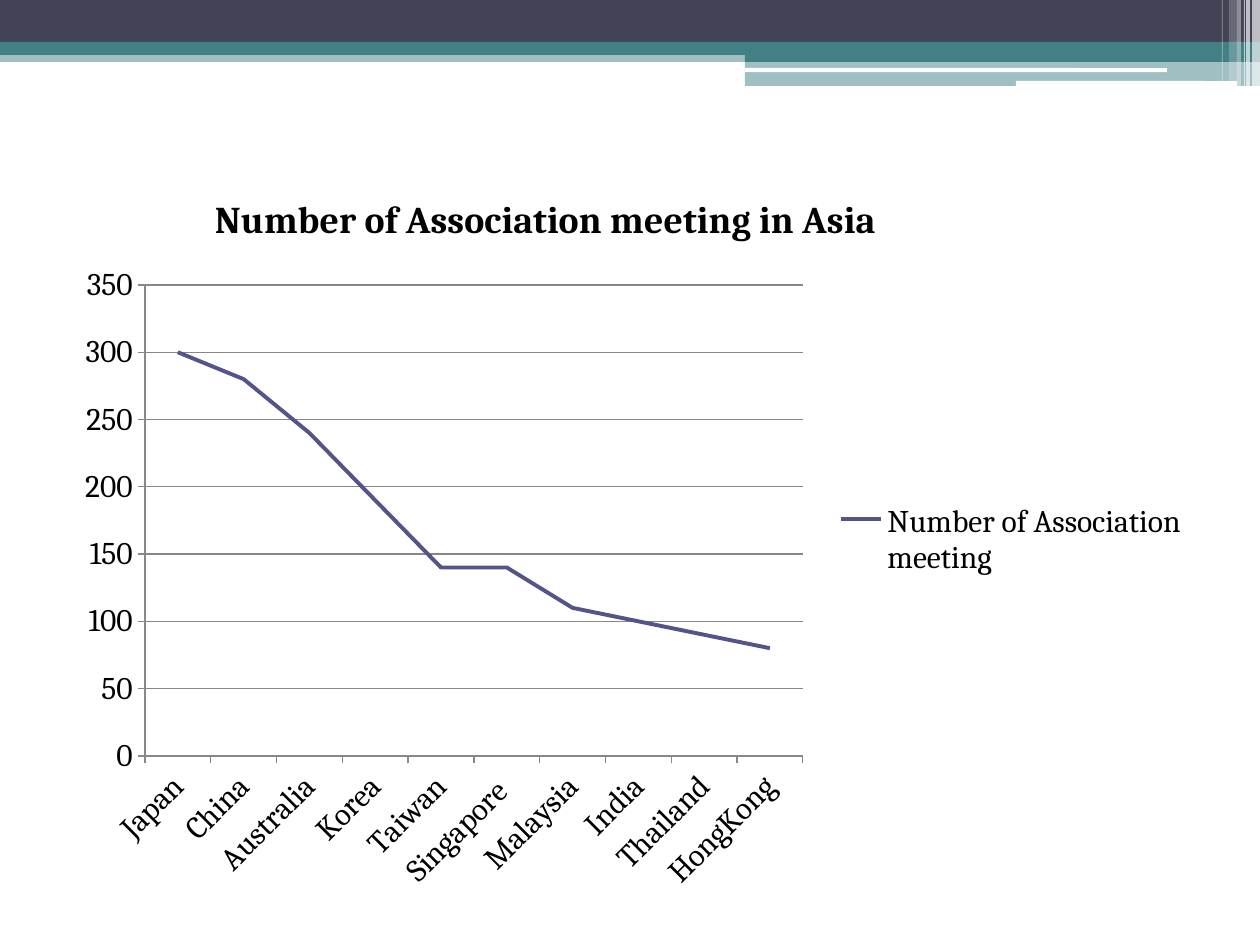
from typing import NamedTuple

from lxml import etree
from pptx import Presentation
from pptx.chart.data import CategoryChartData
from pptx.dml.color import RGBColor
from pptx.enum.chart import XL_CHART_TYPE, XL_LEGEND_POSITION, XL_TICK_MARK
from pptx.enum.shapes import MSO_SHAPE
from pptx.oxml.ns import qn
from pptx.util import Emu, Pt

RECT, ROUNDED = MSO_SHAPE.RECTANGLE, MSO_SHAPE.ROUNDED_RECTANGLE
LINE, LEGEND_RIGHT = XL_CHART_TYPE.LINE, XL_LEGEND_POSITION.RIGHT
TICK_OUTSIDE = XL_TICK_MARK.OUTSIDE

PX_PER_INCH = 126
NAVY, TEAL, WHITE, BLACK = "424456", "438086", "FFFFFF", "000000"
SERIES_COLOR, AXIS_COLOR = "53548A", "878787"
FONT = "Cambria"


class Box(NamedTuple):
    left: int
    top: int
    width: int
    height: int


class Band(NamedTuple):
    box: Box
    color: str
    opacity: int = 100
    kind: MSO_SHAPE = RECT


CHART = Box(63, 175, 1134, 731)
TITLE_AREA = Box(208, 188, 660, 44)
PLOT_AREA = Box(145, 285, 658, 471)
LEGEND_AREA = Box(832, 500, 358, 80)

HEADER = [
    Band(Box(0, 50, 1260, 12), TEAL, 50),
    Band(Box(0, 0, 1260, 42), NAVY),
    Band(Box(0, 42, 1260, 13), TEAL),
    Band(Box(745, 49, 515, 13), TEAL),
    Band(Box(745, 61, 515, 25), TEAL, 50),
    Band(Box(745, 68, 422, 4), WHITE, kind=ROUNDED),
    Band(Box(1016, 81, 221, 5), WHITE, kind=ROUNDED),
    Band(Box(1252, 0, 8, 86), WHITE, 65),
    Band(Box(1246, 0, 4, 86), WHITE, 65),
    Band(Box(1244, 0, 1, 86), WHITE, 60),
    Band(Box(1237, 0, 4, 86), WHITE, 40),
    Band(Box(1229, 0, 8, 81), WHITE, 20),
    Band(Box(1222, 0, 1, 81), WHITE, 30),
]

MEETINGS = {
    "Japan": 300, "China": 280, "Australia": 240, "Korea": 190, "Taiwan": 140,
    "Singapore ": 140, "Malaysia": 110, "India": 100, "Thailand": 90, "HongKong": 80,
}


def px(length: int) -> Emu:
    return Emu(round(length * 914400 / PX_PER_INCH))


def rgb(color: str) -> RGBColor:
    return RGBColor.from_string(color)


def draw_band(slide, band: Band) -> None:
    shape = slide.shapes.add_shape(band.kind, *map(px, band.box))
    shape.shadow.inherit = False
    shape.line.fill.background()
    shape.fill.solid()
    shape.fill.fore_color.rgb = rgb(band.color)
    if band.opacity < 100:
        color = shape.fill._xPr.find(".//" + qn("a:srgbClr"))
        etree.SubElement(color, qn("a:alpha"), val=str(band.opacity * 1000))


def style_font(font, size: float, bold: bool = False) -> None:
    font.name, font.size, font.bold = FONT, Pt(size), bold
    font.color.rgb = rgb(BLACK)


def style_line(line, color: str, width: float) -> None:
    line.color.rgb = rgb(color)
    line.width = Pt(width)


def place(part, area: Box, index: int, inner: bool = False, sized: bool = True) -> None:
    """Give a chart part a manual layout, as fractions of the chart frame."""
    layout = part.find(qn("c:layout"))
    if layout is None:
        layout = etree.Element(qn("c:layout"))
        part.insert(index, layout)
    manual = etree.SubElement(layout, qn("c:manualLayout"))
    settings = [("layoutTarget", "inner")] if inner else []
    settings += [("xMode", "edge"), ("yMode", "edge"),
                 ("x", (area.left - CHART.left) / CHART.width),
                 ("y", (area.top - CHART.top) / CHART.height)]
    if sized:
        settings += [("w", area.width / CHART.width), ("h", area.height / CHART.height)]
    for tag, value in settings:
        text = value if isinstance(value, str) else f"{value:.4f}"
        etree.SubElement(manual, qn("c:" + tag), val=text)


def draw_chart(slide) -> None:
    data = CategoryChartData()
    data.categories = list(MEETINGS)
    data.add_series("Number of Association meeting", list(MEETINGS.values()))
    chart = slide.shapes.add_chart(LINE, *map(px, CHART), data).chart
    style_font(chart.font, 18)

    heading = chart.chart_title.text_frame
    heading.text = "Number of Association meeting in Asia"
    style_font(heading.paragraphs[0].runs[0].font, 21.6, bold=True)
    chart.has_legend = True
    chart.legend.position = LEGEND_RIGHT
    chart.legend.include_in_layout = False

    plot = chart.plots[0]
    plot.vary_by_categories = False
    series = plot.series[0]
    series.smooth = False
    style_line(series.format.line, SERIES_COLOR, 2.25)

    for axis in (chart.category_axis, chart.value_axis):
        axis.major_tick_mark = TICK_OUTSIDE
        style_line(axis.format.line, AXIS_COLOR, 0.75)
        style_font(axis.tick_labels.font, 18)
    label_body = chart.category_axis._element.find(f"{qn('c:txPr')}/{qn('a:bodyPr')}")
    label_body.set("rot", str(-45 * 60000))

    values = chart.value_axis
    values.minimum_scale, values.maximum_scale, values.major_unit = 0, 350, 50
    values.has_major_gridlines = True
    style_line(values.major_gridlines.format.line, AXIS_COLOR, 0.75)

    frame = chart._chartSpace.find(qn("c:chart"))
    place(frame.find(qn("c:title")), TITLE_AREA, 1, sized=False)
    place(frame.find(qn("c:plotArea")), PLOT_AREA, 0, inner=True)
    place(frame.find(qn("c:legend")), LEGEND_AREA, 1)


def main() -> None:
    deck = Presentation()
    deck.slide_width, deck.slide_height = px(1260), px(945)
    slide = deck.slides.add_slide(deck.slide_layouts[6])
    for band in HEADER:
        draw_band(slide, band)
    draw_chart(slide)
    deck.save("out.pptx")


if __name__ == "__main__":
    main()
